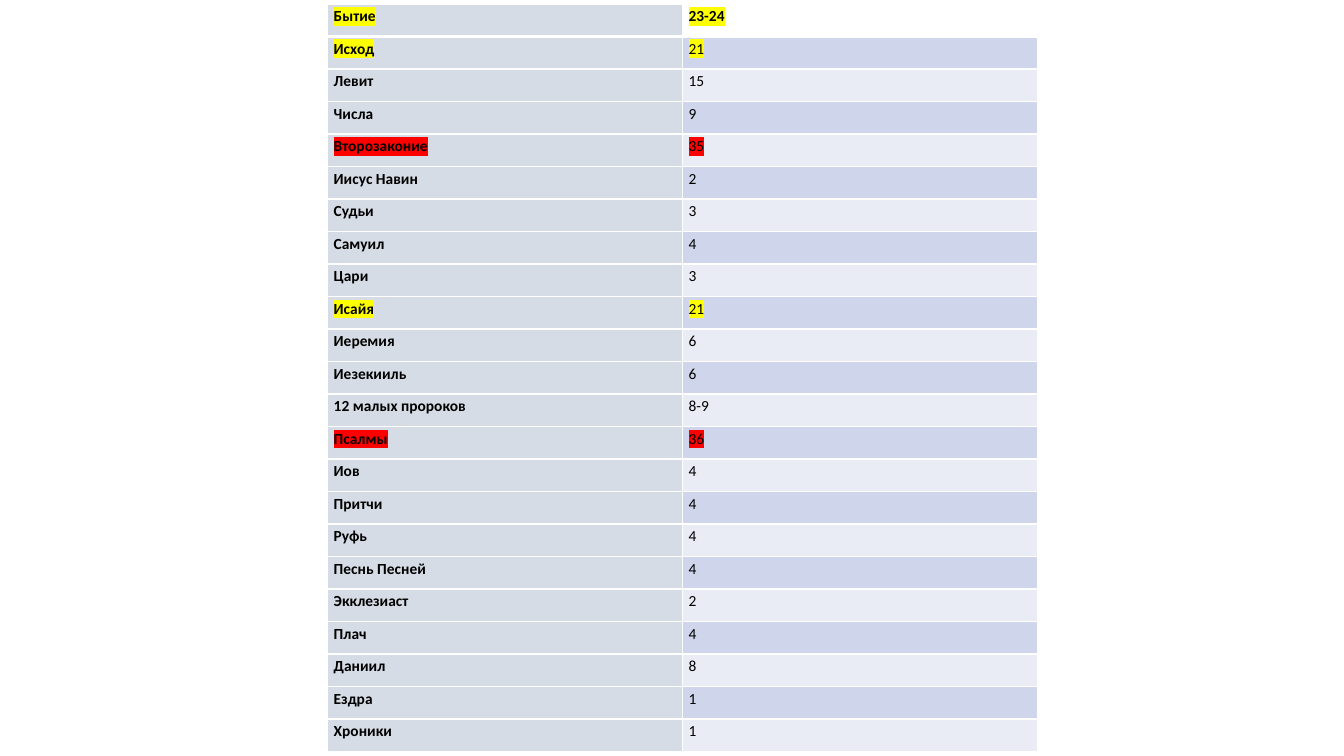
from lxml.etree import SubElement
from pptx import Presentation
from pptx.dml.color import RGBColor
from pptx.oxml.ns import qn
from pptx.util import Inches, Pt

COLORS = {
    "text": "000000",
    "border": "FFFFFF",
    "book": "D6DCE5",
    "odd": "CFD5EA",
    "even": "E9EBF5",
    "yellow": "FFFF00",
    "red": "FF0000",
}

# Book, count, highlight
BOOKS = [
    ("Бытие", "23-24", "yellow"),
    ("Исход", "21", "yellow"),
    ("Левит", "15", None),
    ("Числа", "9", None),
    ("Второзаконие", "35", "red"),
    ("Иисус Навин", "2", None),
    ("Судьи", "3", None),
    ("Самуил", "4", None),
    ("Цари", "3", None),
    ("Исайя", "21", "yellow"),
    ("Иеремия", "6", None),
    ("Иезекииль", "6", None),
    ("12 малых пророков", "8-9", None),
    ("Псалмы", "36", "red"),
    ("Иов", "4", None),
    ("Притчи", "4", None),
    ("Руфь", "4", None),
    ("Песнь Песней", "4", None),
    ("Экклезиаст", "2", None),
    ("Плач", "4", None),
    ("Даниил", "8", None),
    ("Ездра", "1", None),
    ("Хроники", "1", None),
]


def add_solid_fill(parent, color):
    fill = SubElement(parent, qn("a:solidFill"))
    SubElement(fill, qn("a:srgbClr"), val=COLORS[color])


def set_borders(cell, **widths):
    """Draw the four borders; widths are points by side."""
    properties = cell._tc.get_or_add_tcPr()
    for side in "LRTB":
        width = Pt(widths.get(side, 1))
        line = SubElement(properties, qn(f"a:ln{side}"), w=str(width))
        add_solid_fill(line, "border")


def highlight_run(run, color):
    properties = run._r.get_or_add_rPr()
    highlight = SubElement(properties, qn("a:highlight"))
    SubElement(highlight, qn("a:srgbClr"), val=COLORS[color])
    properties.find(qn("a:solidFill")).addnext(highlight)


def write_cell(cell, text, bold, highlight):
    cell.margin_left = cell.margin_right = Inches(0.06)
    cell.margin_top = cell.margin_bottom = 0
    paragraph = cell.text_frame.paragraphs[0]
    paragraph.line_spacing = 1.15
    run = paragraph.add_run()
    run.text = text
    run.font.name = "Calibri"
    run.font.size = Pt(11)
    run.font.bold = bold
    run.font.color.rgb = RGBColor.from_string(COLORS["text"])
    if highlight:
        highlight_run(run, highlight)


def fill_cell(cell, color):
    if color is None:
        cell.fill.background()
        return
    cell.fill.solid()
    cell.fill.fore_color.rgb = RGBColor.from_string(COLORS[color])


def add_book_table(slide):
    frame = slide.shapes.add_table(
        len(BOOKS), 2, Inches(3.25), Inches(0.04), Inches(7.04), Inches(7.42)
    )
    table = frame.table
    table.first_row = False
    table.horz_banding = False
    for index, (book, count, highlight) in enumerate(BOOKS):
        header = index == 0
        band = None if header else ("odd" if index % 2 else "even")
        rule = {0: {"B": 3}, 1: {"T": 3}}.get(index, {})
        columns = [(book, True, "book"), (count, header, band)]
        for column, (text, bold, color) in enumerate(columns):
            cell = table.cell(index, column)
            set_borders(cell, **rule)
            fill_cell(cell, color)
            write_cell(cell, text, bold, highlight)


def main():
    presentation = Presentation()
    presentation.slide_width = Inches(13.33)
    presentation.slide_height = Inches(7.5)
    slide = presentation.slides.add_slide(presentation.slide_layouts[6])
    add_book_table(slide)
    presentation.save("out.pptx")


if __name__ == "__main__":
    main()
